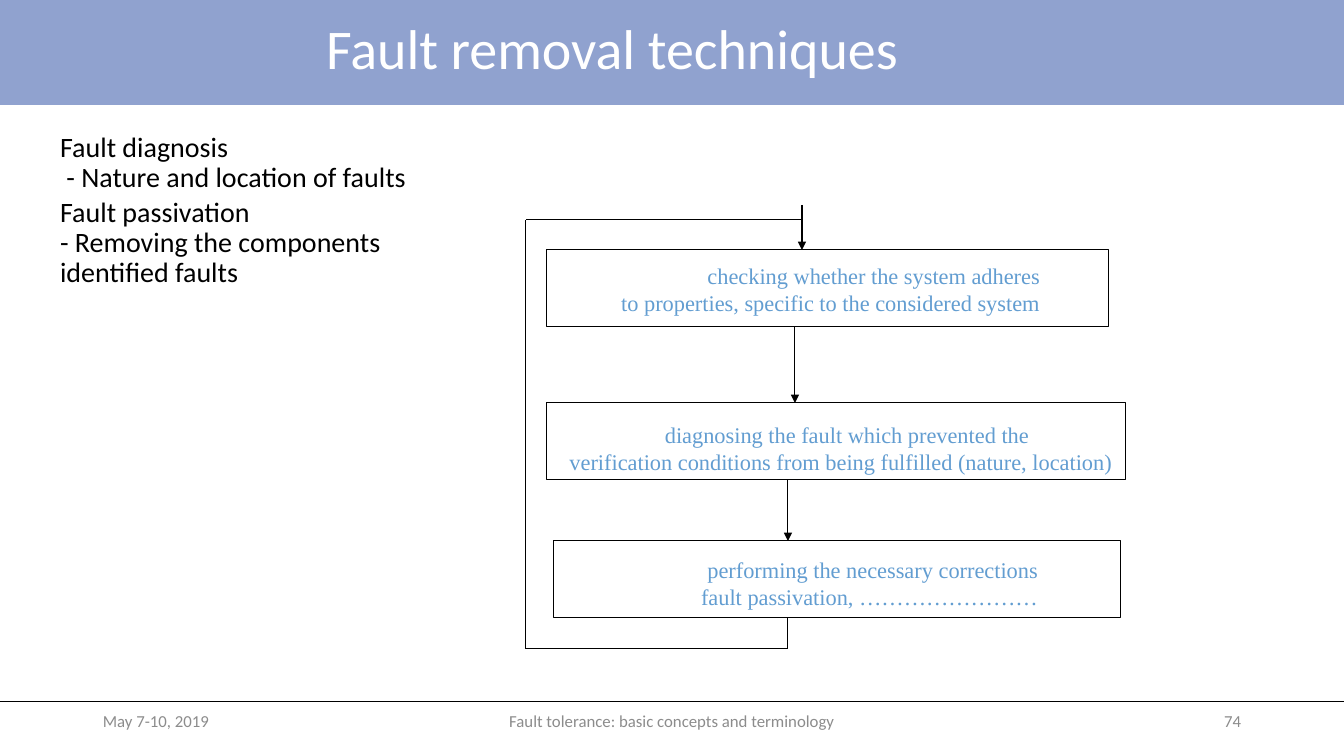
from pptx import Presentation
from pptx.dml.color import RGBColor
from pptx.enum.shapes import MSO_CONNECTOR, MSO_SHAPE
from pptx.enum.text import MSO_ANCHOR, PP_ALIGN
from pptx.oxml import parse_xml
from pptx.oxml.ns import nsdecls
from pptx.util import Pt

SLIDE_W, SLIDE_H = 1344, 756
SCALE = 12192000 / SLIDE_W
COLORS = {
    "band": "90A2CF",
    "title": "FFFFFF",
    "ink": "000000",
    "footer": "8C8C8C",
    "step": "629DD1",
}
TAB = 101


def px(n):
    return round(n * SCALE)


def rgb(name):
    return RGBColor.from_string(COLORS[name])


def xml(tag, content="", attrs=""):
    return parse_xml(f"<a:{tag} {nsdecls('a')} {attrs}>{content}</a:{tag}>")


def place(sp, box):
    sp.left, sp.top, sp.width, sp.height = map(px, box)


def add_run(p, text, size, color, font="Calibri"):
    r = p.add_run()
    r.text = text
    r.font.size = Pt(size)
    r.font.name = font
    r.font.color.rgb = rgb(color)


def add_rect(s, box, fill=None, line=None):
    sp = s.shapes.add_shape(MSO_SHAPE.RECTANGLE, *map(px, box))
    sp.shadow.inherit = False
    if fill:
        sp.fill.solid()
        sp.fill.fore_color.rgb = rgb(fill)
    else:
        sp.fill.background()
    if line:
        sp.line.color.rgb = rgb(line)
        sp.line.width = Pt(0.75)
    else:
        sp.line.fill.background()
    return sp


def add_line(s, start, end, width=0.75, arrow=False):
    c = s.shapes.add_connector(MSO_CONNECTOR.STRAIGHT, *map(px, start + end))
    c.line.color.rgb = rgb("ink")
    c.line.width = Pt(width)
    if arrow:
        c.line._get_or_add_ln().append(xml("tailEnd", attrs='type="triangle"'))
    c._element.spPr.append(xml("effectLst"))


def add_text(s, box, lines, size, color, font="Calibri", align=PP_ALIGN.LEFT,
             anchor=MSO_ANCHOR.TOP):
    tf = s.shapes.add_textbox(*map(px, box)).text_frame
    tf.word_wrap = True
    tf.vertical_anchor = anchor
    for i, text in enumerate(lines):
        p = tf.add_paragraph() if i else tf.paragraphs[0]
        p.alignment = align
        if "\t" in text:
            stop = f'<a:tab pos="{px(TAB)}" algn="l"/>'
            p._p.get_or_add_pPr().append(xml("tabLst", stop))
        add_run(p, text, size, color, font)


def add_title(s, text):
    sp = s.shapes.title
    place(sp, (0, 0, 1224, 103))
    sp.text_frame.vertical_anchor = MSO_ANCHOR.MIDDLE
    p = sp.text_frame.paragraphs[0]
    p.alignment = PP_ALIGN.CENTER
    p.line_spacing = 0.9
    add_run(p, text, 40, "title")


def add_body(s, items):
    sp = s.placeholders[1]
    place(sp, (50, 128, 424, 77))
    tf = sp.text_frame
    for i, lines in enumerate(items):
        p = tf.add_paragraph() if i else tf.paragraphs[0]
        pPr = p._p.get_or_add_pPr()
        pPr.set("marL", "0")
        pPr.set("indent", "0")
        pPr.append(xml("buNone"))
        p.line_spacing = 0.9
        p.space_before = Pt(3.4 if i else 0)
        for j, text in enumerate(lines):
            if j:
                p.add_line_break()
            add_run(p, text, 20, "ink")


def add_step(s, box, text_box, lines, align=PP_ALIGN.RIGHT):
    add_rect(s, box, line="ink")
    add_text(s, text_box, lines, 16, "step", "Times New Roman", align)


def add_footer(s, left, width, text, align):
    add_text(s, (left, 701, width, 40), [text], 12, "footer",
             align=align, anchor=MSO_ANCHOR.MIDDLE)


def main():
    prs = Presentation()
    prs.slide_width, prs.slide_height = px(SLIDE_W), px(SLIDE_H)
    s = prs.slides.add_slide(prs.slide_layouts[1])

    band = add_rect(s, (0, 0, SLIDE_W, 105), fill="band")
    s.shapes._spTree.insert(2, band._element)
    add_line(s, (0, 701), (SLIDE_W, 701), width=0.5)
    add_title(s, "Fault removal techniques")
    add_body(s, [
        ("Fault diagnosis", " - Nature and location of faults"),
        ("Fault passivation", "- Removing the components identified faults"),
    ])

    add_footer(s, 93, 302, "May 7-10, 2019", PP_ALIGN.LEFT)
    add_footer(s, 445, 454, "Fault tolerance: basic concepts and terminology",
               PP_ALIGN.CENTER)
    add_footer(s, 949, 302, "74", PP_ALIGN.RIGHT)

    add_step(s, (547, 250, 562, 77), (604, 257, 446, 65), [
        "checking whether the system adheres",
        "to properties, specific to the considered system",
    ])
    add_step(s, (547, 403, 579, 77), (554, 416, 580, 65), [
        "\tdiagnosing the fault which prevented the",
        " verification conditions from being fulfilled (nature, location)",
    ], PP_ALIGN.LEFT)
    add_step(s, (554, 541, 567, 77), (686, 551, 362, 65), [
        "performing the necessary corrections",
        "fault passivation, ……………………",
    ])

    for x, top, bottom in ((802, 205, 250), (795, 327, 403), (788, 480, 541)):
        add_line(s, (x, top), (x, bottom), arrow=True)
    loop = [(788, 618), (788, 649), (526, 649), (526, 220), (802, 220)]
    for start, end in zip(loop, loop[1:]):
        add_line(s, start, end)

    prs.save("out.pptx")


if __name__ == "__main__":
    main()
